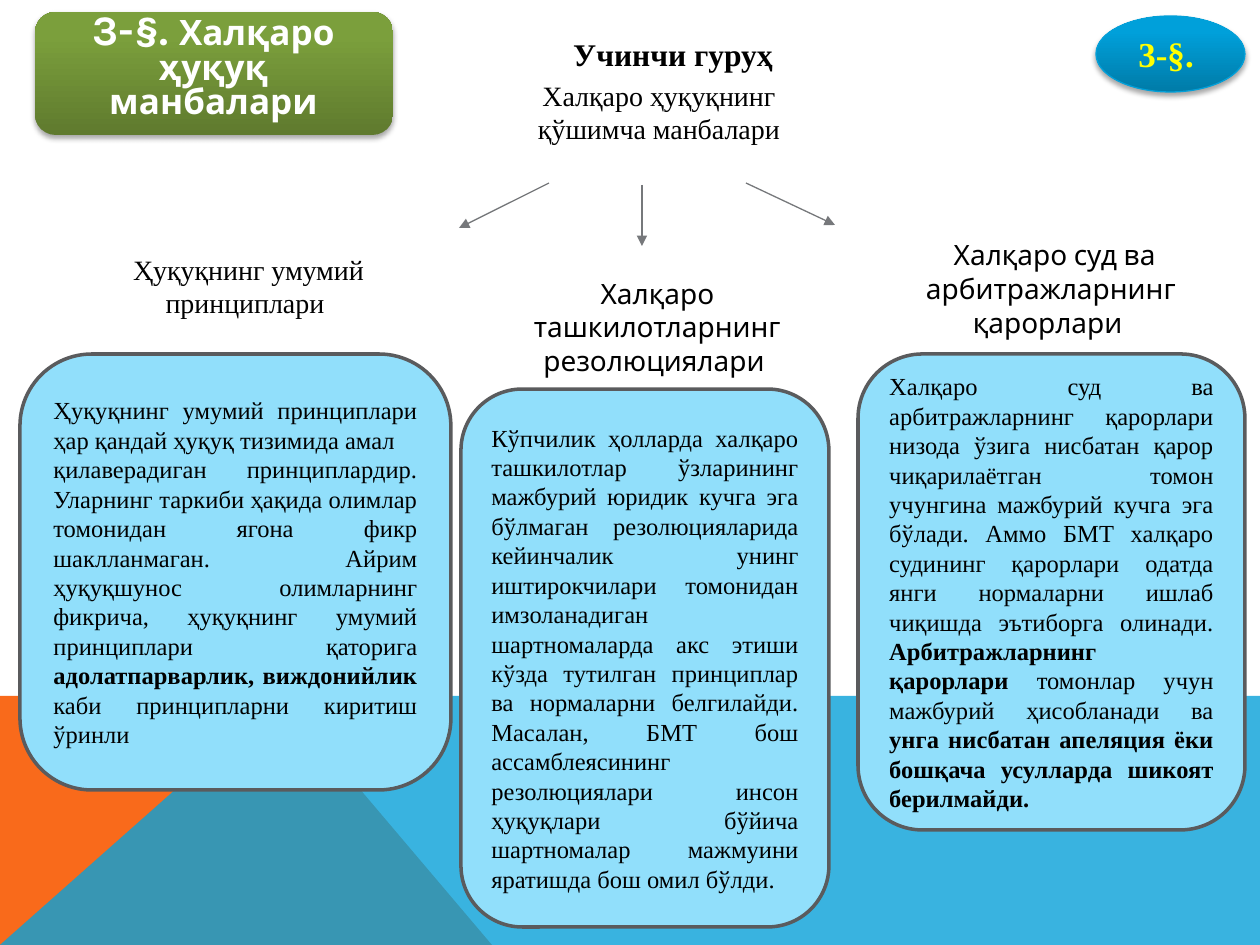
from lxml import etree
from pptx import Presentation
from pptx import util as u
from pptx.dml.color import RGBColor
from pptx.enum import shapes, text
from pptx.oxml import ns

PX = 914400 / 126
HUES = {
    "orange": "F96A1B", "blue": "08A1D9", "pale": "91DFFB", "edge": "5A5B5D",
    "arrow": "76787B", "rim": "03A0D9", "black": "000000", "white": "FFFFFF",
    "yellow": "FFFF00", "sky": ("007BA8", "00A0DA"), "green": ("5F7A2E", "7B9F3C"),
}
SERIF, SANS = "Times New Roman", "Karla"
KIND = shapes.MSO_SHAPE
MID, JUST = text.PP_ALIGN.CENTER, text.PP_ALIGN.JUSTIFY

# Each band: fill, opacity in percent, corner points
BANDS = [
    ("orange", 100, [(0, 945), (0, 696), (281, 696), (492, 945)]),
    ("blue", 80, [(0, 945), (281, 696), (1260, 696), (1260, 945)]),
]

# Each label: box, wording, font, size, bold
LABELS = [
    ((556, 29, 234, 50), "Учинчи гуруҳ", SERIF, 18, True),
    ((508, 72, 302, 81), "Халқаро ҳуқуқнинг қўшимча манбалари", SERIF, 16, False),
    ((105, 246, 287, 81), "Ҳуқуқнинг умумий принциплари ", SERIF, 16, False),
    ((480, 270, 355, 81), "Халқаро ташкилотларнинг резолюциялари ", SANS, 16, False),
]
COURT = (877, 228, 348, 118)
COURT_RUNS = [(" ", 18, False), ("Халқаро суд ва арбитражларнинг қарорлари ", 16, False)]

ARROWS = [((549, 183), (459, 228)), ((746, 183), (835, 225)), ((642, 185), (642, 246))]

# Each panel: box, then paragraphs of (wording, bold) runs
PANELS = [
    ((20, 354, 431, 436), [
        [("Ҳуқуқнинг умумий принциплари ҳар қандай ҳуқуқ тизимида амал", False)],
        [("қилаверадиган принциплардир. Уларнинг таркиби ҳақида олимлар томонидан "
          "ягона фикр шаклланмаган. Айрим ҳуқуқшунос олимларнинг фикрича, ҳуқуқнинг "
          "умумий принциплари қаторига ", False),
         ("адолатпарварлик, виждонийлик", True),
         (" каби принципларни киритиш ўринли", False)],
    ]),
    ((461, 389, 368, 538), [
        [("Кўпчилик ҳолларда халқаро ташкилотлар ўзларининг мажбурий юридик кучга эга "
          "бўлмаган резолюцияларида кейинчалик унинг иштирокчилари томонидан "
          "имзоланадиган шартномаларда акс этиши кўзда тутилган принциплар ва "
          "нормаларни белгилайди. Масалан, БМТ бош ассамблеясининг резолюциялари "
          "инсон ҳуқуқлари бўйича шартномалар мажмуини яратишда бош омил бўлди.", False)],
    ]),
    ((858, 354, 387, 476), [
        [("Халқаро суд ва арбитражларнинг қарорлари низода ўзига нисбатан қарор "
          "чиқарилаётган томон учунгина мажбурий кучга эга бўлади. Аммо БМТ халқаро "
          "судининг қарорлари одатда янги нормаларни ишлаб чиқишда эътиборга "
          "олинади. ", False),
         ("Арбитражларнинг қарорлари ", True),
         ("томонлар учун мажбурий ҳисобланади ва ", False),
         ("унга нисбатан апеляция ёки бошқача усулларда шикоят берилмайди.", True)],
    ]),
]


def emu(nums):
    return [round(n * PX) for n in nums]


def rgb(name):
    return RGBColor.from_string(HUES[name])


def node(parent, tag, **attrs):
    return etree.SubElement(parent, ns.qn(tag), attrs)


def write(shape, paras, font, hue="black", align=MID):
    """Fill a shape with paragraphs made of (wording, size, bold) runs."""
    frame = shape.text_frame
    frame.word_wrap = True
    for i, runs in enumerate(paras):
        para = frame.add_paragraph() if i else frame.paragraphs[0]
        para.alignment = align
        for words, size, bold in runs:
            run = para.add_run()
            run.text = words
            run.font.name, run.font.size, run.font.bold = font, u.Pt(size), bold
            run.font.color.rgb = rgb(hue)
    return frame


def label(slide, box, runs, font, hue="black"):
    return write(slide.shapes.add_textbox(*emu(box)), [runs], font, hue)


def glossy(slide, kind, box, hues):
    """Add a shape with an upward gradient and a soft shadow below it."""
    shape = slide.shapes.add_shape(kind, *emu(box))
    shape.fill.gradient()
    shape.fill.gradient_angle = 90
    for stop, pos, hue in zip(shape.fill.gradient_stops, (0, 0.8), HUES[hues]):
        stop.position = pos
        stop.color.rgb = RGBColor.from_string(hue)
    shape.line.fill.background()
    shape.shadow.inherit = False
    effects = shape.element.spPr.find(ns.qn("a:effectLst"))
    shade = node(effects, "a:outerShdw", blurRad=str(u.Pt(3.1)), dist=str(u.Pt(1.8)),
                 dir="5400000", rotWithShape="0")
    node(node(shade, "a:srgbClr", val=HUES["black"]), "a:alpha", val="35000")
    return shape


def band(slide, hue, alpha, points):
    pen = slide.shapes.build_freeform(*points[0], scale=PX)
    pen.add_line_segments(points[1:], close=True)
    shape = pen.convert_to_shape()
    shape.shadow.inherit = False
    shape.line.fill.background()
    shape.fill.solid()
    shape.fill.fore_color.rgb = rgb(hue)
    color = shape.element.spPr.find(ns.qn("a:solidFill"))[0]
    node(color, "a:alpha", val=str(alpha * 1000))


def panel(slide, box, paras):
    shape = slide.shapes.add_shape(KIND.ROUNDED_RECTANGLE, *emu(box))
    shape.shadow.inherit = False
    shape.fill.solid()
    shape.fill.fore_color.rgb = rgb("pale")
    shape.line.color.rgb = rgb("edge")
    shape.line.width = u.Pt(2)
    runs = [[(words, 14, bold) for words, bold in para] for para in paras]
    write(shape, runs, SERIF, align=JUST)


def arrow(slide, start, end):
    line = slide.shapes.add_connector(shapes.MSO_CONNECTOR.STRAIGHT, *emu(start + end))
    line.line.color.rgb = rgb("arrow")
    line.line.width = u.Pt(0.75)
    node(line.line._get_or_add_ln(), "a:tailEnd", type="triangle")
    node(line.element.spPr, "a:effectLst")


def main():
    deck = Presentation()
    deck.slide_width, deck.slide_height = emu((1260, 945))
    slide = deck.slides.add_slide(deck.slide_layouts[6])
    for item in BANDS:
        band(slide, *item)

    badge = glossy(slide, KIND.OVAL, (1096, 16, 149, 76), "sky")
    badge.line.color.rgb = rgb("rim")
    badge.line.width = u.Pt(0.75)
    write(badge, [[("3-§. ", 20, True)]], SERIF, "yellow")

    glossy(slide, KIND.ROUNDED_RECTANGLE, (35, 12, 358, 123), "green")
    title = label(slide, (45, 12, 337, 111),
                  [("3-§. ", 24, True), ("Халқаро ҳуқуқ манбалари", 20, True)],
                  SANS, "white")
    title.vertical_anchor = text.MSO_ANCHOR.MIDDLE
    title.margin_left = title.margin_right = u.Inches(0.15)
    title.paragraphs[0].line_spacing = 0.8

    for box, words, font, size, bold in LABELS:
        label(slide, box, [(words, size, bold)], font)
    label(slide, COURT, COURT_RUNS, SANS)
    for item in PANELS:
        panel(slide, *item)
    for ends in ARROWS:
        arrow(slide, *ends)
    deck.save("out.pptx")


if __name__ == "__main__":
    main()
